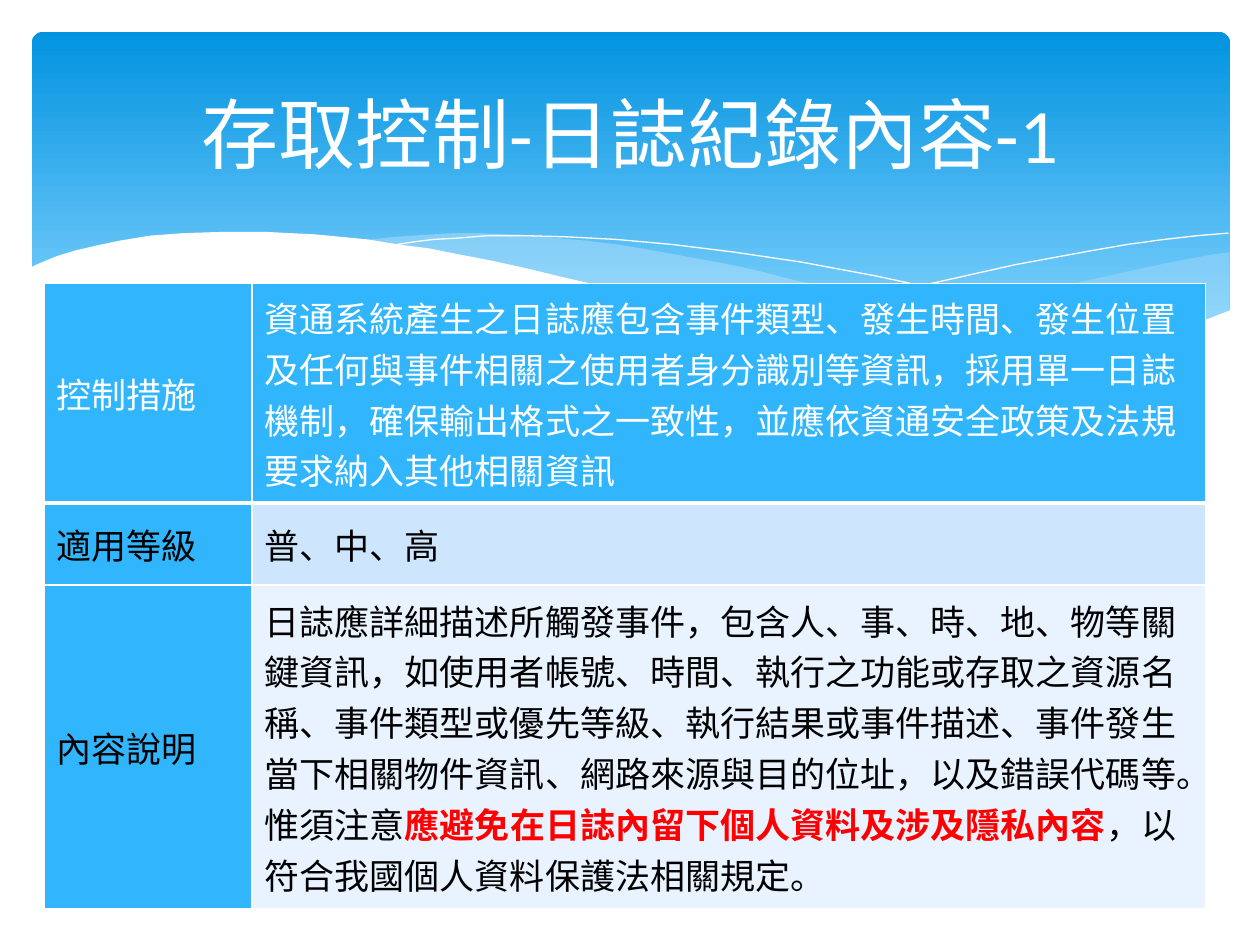
import pptx
import pptx.util
import pptx.dml.color
import pptx.enum.shapes
import pptx.enum.text
import pptx.oxml
from lxml import etree
from pptx.oxml.ns import qn

Cm, Pt = pptx.util.Cm, pptx.util.Pt
RGB = pptx.dml.color.RGBColor
ALIGN = pptx.enum.text.PP_ALIGN
MID = pptx.enum.text.MSO_ANCHOR.MIDDLE

WHITE = RGB(255, 255, 255)
BLACK = RGB(0, 0, 0)
RED = RGB(255, 0, 0)
DEEP = RGB(0x02, 0x93, 0xE0)
SKY = RGB(0x83, 0xD3, 0xFE)
MIST = RGB(0xC6, 0xE7, 0xFC)
BLUE = RGB(0x31, 0xB6, 0xFD)
PALE = RGB(0xCE, 0xE5, 0xFE)
LIGHT = RGB(0xE8, 0xF3, 0xFF)

UNIT = Cm(2.54) / 100  # wave points are in hundredths of an inch

# Outlines of the waves
RIGHT = [(976, 200), (962, 202), (935, 207), (906, 213), (861, 223),
         (805, 237), (753, 248), (706, 257), (661, 265), (691, 269),
         (719, 272), (745, 275), (769, 277), (803, 278), (835, 277),
         (863, 275), (889, 272), (913, 267), (935, 262), (949, 257),
         (963, 252), (976, 247)]
CENTRE = [(893, 273), (866, 269), (837, 265), (807, 260), (775, 254),
          (741, 247), (706, 240), (668, 231), (629, 222), (598, 214),
          (569, 208), (541, 203), (514, 198), (489, 194), (465, 191),
          (442, 189), (420, 187), (399, 186), (380, 185), (361, 185),
          (344, 186), (313, 188), (286, 191), (323, 196), (362, 203),
          (404, 211), (449, 222), (491, 232), (530, 240), (566, 248),
          (601, 255), (634, 261), (665, 266), (695, 270), (722, 274),
          (748, 276), (773, 277), (807, 278), (838, 278), (867, 276)]
CREST = [(309, 195), (328, 192), (344, 190), (363, 189), (387, 187),
         (416, 187), (450, 188), (489, 190), (533, 194), (582, 200),
         (636, 208), (695, 219), (760, 233), (831, 251), (907, 272)]
RISE = [(613, 257), (653, 246), (695, 235), (748, 223), (806, 210),
        (866, 199), (895, 194), (924, 190), (951, 187), (975, 185)]
FRONT = [(977, 246), (959, 253), (940, 259), (920, 265), (899, 269),
         (875, 273), (850, 275), (823, 277), (793, 276), (761, 275),
         (726, 272), (688, 268), (648, 262), (603, 254), (555, 245),
         (503, 233), (447, 220), (418, 213), (391, 207), (365, 202),
         (340, 197), (316, 194), (292, 190), (271, 188), (250, 186),
         (230, 185), (211, 184), (177, 184), (146, 185), (119, 187),
         (95, 191), (76, 195), (59, 199), (46, 203), (36, 207),
         (29, 210), (23, 213), (23, 329), (977, 329)]

# Table rows: height, text colour, body fill, rule below, label, body runs
ROWS = [
    (4.42, WHITE, BLUE, 3, "控制措施",
     [("資通系統產生之日誌應包含事件類型、發生時間、發生位置及任何與事件相關之"
       "使用者身分識別等資訊，採用單一日誌機制，確保輸出格式之一致性，並應依"
       "資通安全政策及法規要求納入其他相關資訊", {})]),
    (1.65, BLACK, PALE, 1, "適用等級", [("普、中、高", {})]),
    (6.53, BLACK, LIGHT, 1, "內容說明",
     [("日誌應詳細描述所觸發事件，包含人、事、時、地、物等關鍵資訊，如使用者"
       "帳號、時間、執行之功能或存取之資源名稱、事件類型或優先等級、執行結果"
       "或事件描述、事件發生當下相關物件資訊、網路來源與目的位址，以及錯誤"
       "代碼等。惟須注意", {}),
      ("應避免在日誌內留下個人資料及涉及隱私內容", {"color": RED, "bold": True}),
      ("，以符合我國個人資料保護法相關規定。", {})]),
]


def write(para, text, size=20, color=BLACK, bold=False, font="Calibri"):
    run = para.add_run()
    run.text = text
    face = run.font
    face.name, face.size, face.bold = font, Pt(size), bold
    face.color.rgb = color


class Deck:
    def __init__(self):
        self.prs = pptx.Presentation()
        self.prs.slide_width, self.prs.slide_height = Cm(25.4), Cm(19.05)
        self.slide = self.prs.slides.add_slide(self.prs.slide_layouts[6])
        self.shapes = self.slide.shapes

    def banner(self, x, y, w, h):
        kind = pptx.enum.shapes.MSO_SHAPE.ROUNDED_RECTANGLE
        box = self.shapes.add_shape(kind, Cm(x), Cm(y), Cm(w), Cm(h))
        box.adjustments[0] = 0.034
        box.shadow.inherit = False
        box.line.fill.background()
        box.fill.gradient()
        box.fill.gradient_angle = 270
        for stop, (pos, color) in zip(box.fill.gradient_stops,
                                      [(0, DEEP), (0.9, SKY)]):
            stop.position, stop.color.rgb = pos, color

    def wave(self, points, fill=None, alpha=100):
        """Draw a filled wave, or a white hairline if there is no fill."""
        path = self.shapes.build_freeform(*points[0], scale=UNIT)
        path.add_line_segments(points[1:], close=fill is not None)
        form = path.convert_to_shape()
        form.shadow.inherit = False
        if fill is None:
            form.fill.background()
            form.line.color.rgb = WHITE
            form.line.width = Pt(0)
            return
        form.line.fill.background()
        form.fill.solid()
        form.fill.fore_color.rgb = fill
        if alpha < 100:
            tone = form.fill._xPr.find(".//" + qn("a:srgbClr"))
            etree.SubElement(tone, qn("a:alpha"), val=str(alpha * 1000))

    def title(self, text, x, y, w, h):
        box = self.shapes.add_textbox(Cm(x), Cm(y), Cm(w), Cm(h))
        frame = box.text_frame
        frame.word_wrap = True
        frame.vertical_anchor = MID
        para = frame.paragraphs[0]
        para.alignment = ALIGN.CENTER
        write(para, text, size=44, color=WHITE)

    def cell(self, cell, runs, color, fill, edges):
        cell.vertical_anchor = MID
        for text, form in runs:
            write(cell.text_frame.paragraphs[0], text,
                  **{"color": color, **form})
        # Borders come before the fill in the cell properties
        props = cell._tc.get_or_add_tcPr()
        for side, width in edges.items():
            line = etree.SubElement(props, qn("a:ln" + side),
                                    w=str(Pt(width)))
            solid = etree.SubElement(line, qn("a:solidFill"))
            etree.SubElement(solid, qn("a:srgbClr"), val=str(WHITE))
        cell.fill.solid()
        cell.fill.fore_color.rgb = fill

    def table(self, rows, x, y, widths):
        high = sum(row[0] for row in rows)
        grid = self.shapes.add_table(len(rows), len(widths), Cm(x), Cm(y),
                                     Cm(sum(widths)), Cm(high)).table
        grid.first_row = grid.horz_banding = False
        for col, width in zip(grid.columns, widths):
            col.width = Cm(width)
        above = 1
        for i, (height, color, fill, below, label, body) in enumerate(rows):
            grid.rows[i].height = Cm(height)
            edges = {"L": 1, "R": 1, "T": above, "B": below}
            self.cell(grid.cell(i, 0), [(label, {})], color, BLUE, edges)
            self.cell(grid.cell(i, 1), body, color, fill, edges)
            above = below


def main():
    deck = Deck()
    # Banner with waves
    deck.banner(0.64, 0.64, 24.16, 6.86)
    deck.wave(RIGHT, MIST, 29)
    deck.wave(CENTRE, MIST, 40)
    deck.wave(CREST)
    deck.wave(RISE)
    deck.wave(FRONT, WHITE)
    # Title and table
    deck.title("存取控制-日誌紀錄內容-1", 1.27, 0.94, 22.86, 3.48)
    deck.table(ROWS, 0.89, 5.72, [4.19, 19.22])
    deck.prs.save("out.pptx")


if __name__ == "__main__":
    main()
